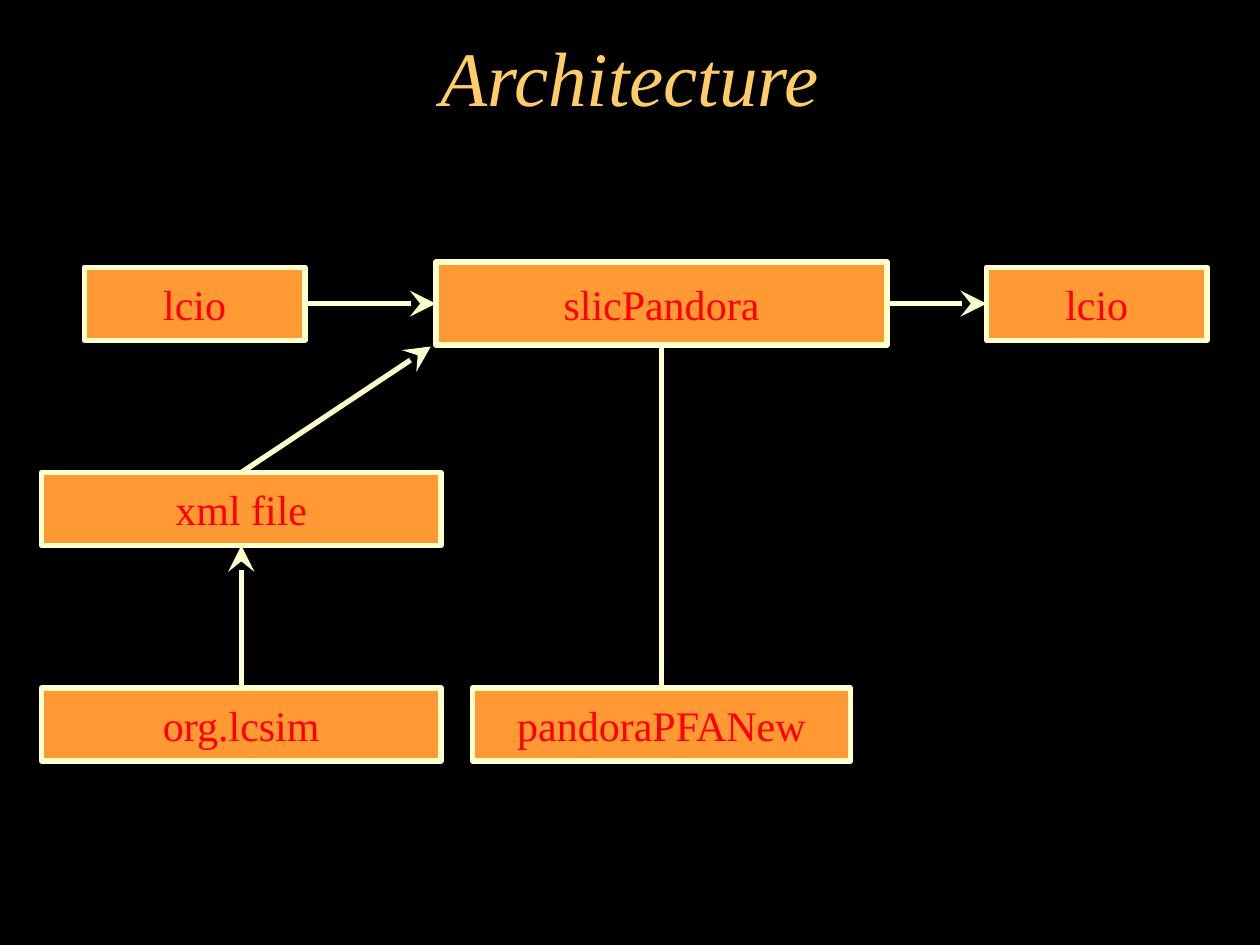
import pptx
import pptx.dml.color
import pptx.enum.shapes
import pptx.enum.text
import pptx.oxml.ns
import pptx.util
from lxml import etree
from pptx.util import Inches

FONT = "Times New Roman"
TOP, LEFT, BOTTOM, RIGHT = range(4)


def color(value):
    return pptx.dml.color.RGBColor.from_string(value)


def add_text(frame, text, size, text_color, italic=False):
    paragraph = frame.paragraphs[0]
    paragraph.alignment = pptx.enum.text.PP_ALIGN.CENTER
    run = paragraph.add_run()
    run.text = text
    run.font.name = FONT
    run.font.size = pptx.util.Pt(size)
    run.font.italic = italic
    run.font.color.rgb = color(text_color)


def style_line(line):
    line.color.rgb = color("FFFFCC")
    line.width = pptx.util.Pt(3)


def add_title(slide, left, top, width, height):
    title = slide.shapes.title
    title.left, title.top = Inches(left), Inches(top)
    title.width, title.height = Inches(width), Inches(height)
    title.text_frame.vertical_anchor = pptx.enum.text.MSO_ANCHOR.BOTTOM
    add_text(title.text_frame, "Architecture", 44, "FFCC66", italic=True)


def add_component(slide, text, left, top, width, height=0.58):
    shape = slide.shapes.add_shape(
        pptx.enum.shapes.MSO_SHAPE.RECTANGLE,
        Inches(left), Inches(top), Inches(width), Inches(height))
    shape.shadow.inherit = False
    shape.fill.solid()
    shape.fill.fore_color.rgb = color("FF9933")
    style_line(shape.line)
    shape.text_frame.word_wrap = False
    shape.text_frame.vertical_anchor = pptx.enum.text.MSO_ANCHOR.MIDDLE
    add_text(shape.text_frame, text, 24, "FF0000")
    return shape


def add_link(slide, start, start_side, end, end_side=None, arrow=True):
    """Link a component to another one, or to an (x, y) point if no side is given."""
    end_x, end_y = (0, 0) if end_side is not None else map(Inches, end)
    connector = slide.shapes.add_connector(
        pptx.enum.shapes.MSO_CONNECTOR.STRAIGHT, 0, 0, end_x, end_y)
    connector.begin_connect(start, start_side)
    if end_side is not None:
        connector.end_connect(end, end_side)
    style_line(connector.line)
    if arrow:
        etree.SubElement(connector.line._get_or_add_ln(), pptx.oxml.ns.qn("a:tailEnd"),
                         type="stealth", w="lg", len="lg")
    etree.SubElement(connector._element.spPr, pptx.oxml.ns.qn("a:effectLst"))


def add_diagram(slide, left, top):
    # Processing row
    source = add_component(slide, "lcio", left + 0.34, top + 0.04, 1.75)
    pandora = add_component(slide, "slicPandora", left + 3.13, top, 3.58, 0.66)
    result = add_component(slide, "lcio", left + 7.5, top + 0.04, 1.75)

    # Supporting components
    xml_file = add_component(slide, "xml file", left, top + 1.67, 3.17)
    lcsim = add_component(slide, "org.lcsim", left, top + 3.38, 3.17)
    library = add_component(slide, "pandoraPFANew", left + 3.42, top + 3.38, 3)

    # Links
    add_link(slide, source, RIGHT, pandora, LEFT)
    add_link(slide, pandora, RIGHT, result, LEFT)
    add_link(slide, lcsim, TOP, xml_file, BOTTOM)
    add_link(slide, xml_file, TOP, (left + 3.09, top + 0.67))
    add_link(slide, pandora, BOTTOM, library, TOP, arrow=False)


def main():
    presentation = pptx.Presentation()
    presentation.slide_width = Inches(10)
    presentation.slide_height = Inches(7.5)
    slide = presentation.slides.add_slide(presentation.slide_layouts[5])
    slide.background.fill.solid()
    slide.background.fill.fore_color.rgb = color("000000")
    add_title(slide, 0.75, 0.22, 8.5, 0.8)
    add_diagram(slide, 0.33, 2.08)
    presentation.save("out.pptx")


if __name__ == "__main__":
    main()
